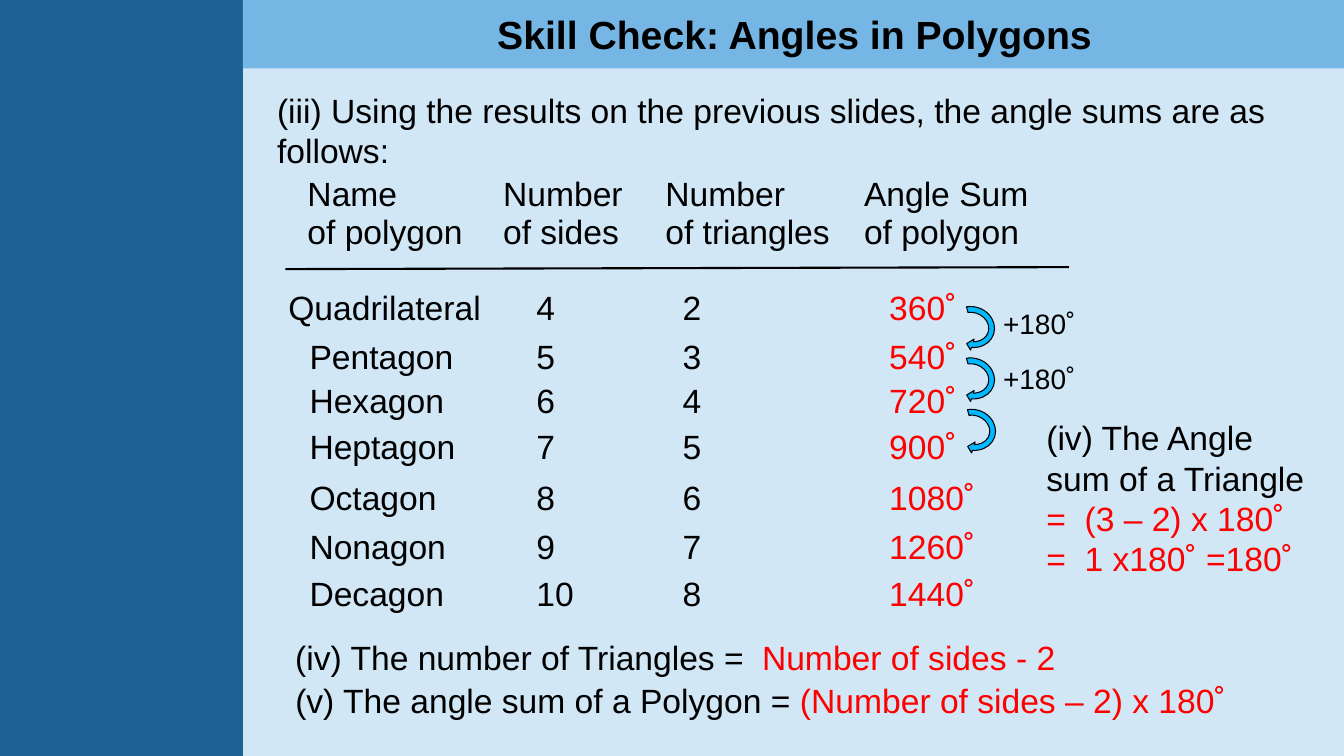
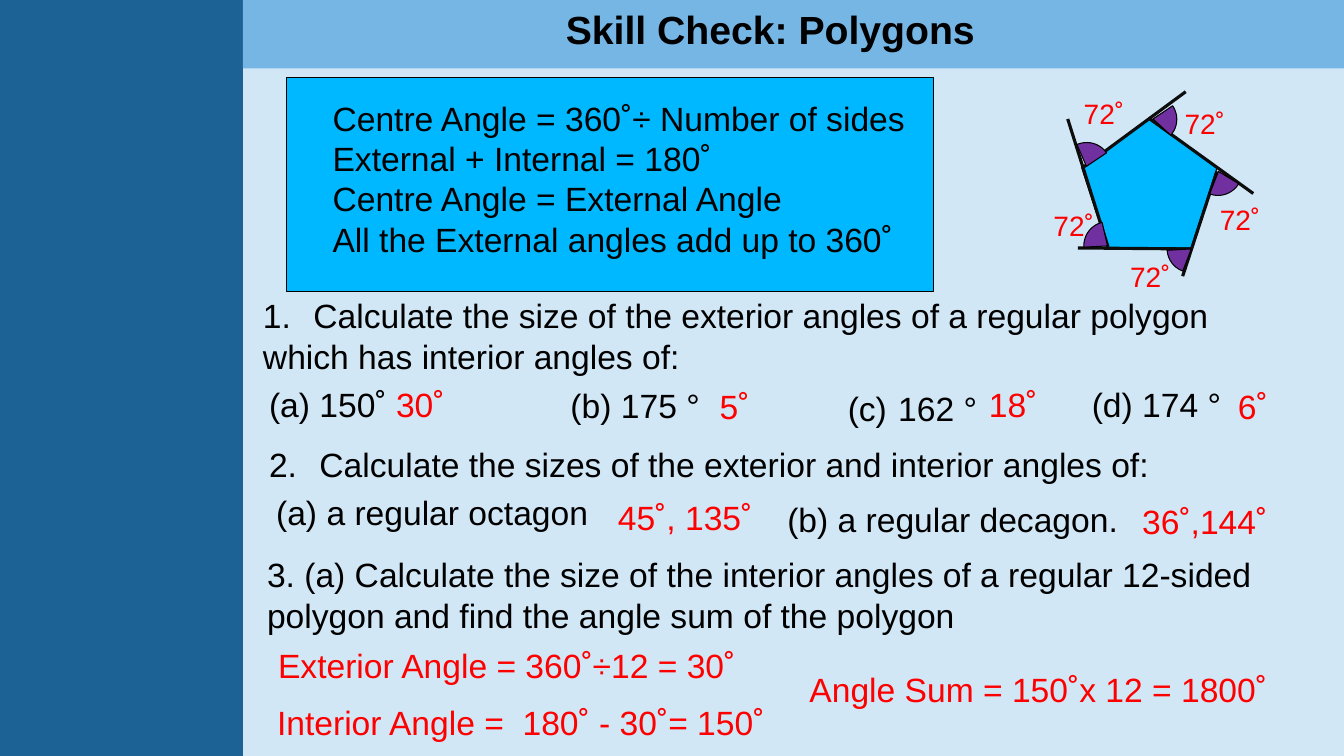
"""Build two revision slides on the angles of polygons."""
from dataclasses import dataclass

from lxml import etree
from pptx import Presentation
from pptx.dml.color import RGBColor
from pptx.enum.shapes import MSO_CONNECTOR, MSO_SHAPE
from pptx.enum.text import MSO_ANCHOR, PP_ALIGN
from pptx.oxml.ns import qn
from pptx.util import Pt

PX = 9144
TAB = 50
RECTANGLE = MSO_SHAPE.RECTANGLE
PENTAGON = MSO_SHAPE.REGULAR_PENTAGON
PIE = MSO_SHAPE.PIE
CIRCULAR_ARROW = MSO_SHAPE.CIRCULAR_ARROW
STRAIGHT = MSO_CONNECTOR.STRAIGHT
LEFT, CENTER = PP_ALIGN.LEFT, PP_ALIGN.CENTER
TOP = MSO_ANCHOR.TOP


@dataclass(frozen=True)
class Theme:
    font: str = "Arial"
    page: str = "D1E7F6"
    sidebar: str = "1D6294"
    banner: str = "75B6E5"
    accent: str = "00B8FF"
    wedge: str = "7030A0"
    ink: str = "000000"
    side: str = "0D0D0D"
    answer: str = "FF0000"
    title: int = 28
    body: int = 24
    label: int = 20


theme = Theme()
INK, RED = theme.ink, theme.answer


def write(frame, paragraphs, size=theme.body, bold=False, align=LEFT, start=None):
    """Fill a text frame with paragraphs made of (text, colour) runs."""
    frame.word_wrap = True
    for index, runs in enumerate(paragraphs):
        paragraph = frame.add_paragraph() if index else frame.paragraphs[0]
        paragraph.alignment = align
        properties = paragraph._p.get_or_add_pPr()
        if start:
            properties.set("marL", str(TAB * PX))
            properties.set("indent", str(-TAB * PX))
            etree.SubElement(properties, qn("a:buFont"), typeface=theme.font)
            etree.SubElement(properties, qn("a:buAutoNum"), type="alphaLcParenBoth", startAt=str(start))
        if "\t" in runs[0][0]:
            stops = etree.SubElement(properties, qn("a:tabLst"))
            etree.SubElement(stops, qn("a:tab"), pos=str(TAB * PX), algn="l")
        for text, color in runs:
            run = paragraph.add_run()
            run.text = text
            run.font.name = theme.font
            run.font.size = Pt(size)
            run.font.bold = bold
            run.font.color.rgb = RGBColor.from_string(color)


def outline(slide, kind, box, fill, lined=True, rotation=0, adjustments=()):
    """Draw a filled preset shape, with a thin outline if lined."""
    shape = slide.shapes.add_shape(kind, *[length * PX for length in box])
    shape.shadow.inherit = False
    shape.fill.solid()
    shape.fill.fore_color.rgb = RGBColor.from_string(fill)
    if lined:
        shape.line.color.rgb = RGBColor.from_string(INK)
        shape.line.width = Pt(0.75)
    else:
        shape.line.fill.background()
    shape.rotation = rotation
    for index, value in enumerate(adjustments):
        shape.adjustments[index] = value


deck = Presentation()
deck.slide_width, deck.slide_height = 1333 * PX, 750 * PX
slides = []
for title, left, top in [("Skill Check: Angles in Polygons", 242, 5), ("Skill Check: Polygons", 218, 0)]:
    slide = deck.slides.add_slide(deck.slide_layouts[6])
    slide.background.fill.solid()
    slide.background.fill.fore_color.rgb = RGBColor.from_string(theme.page)
    outline(slide, RECTANGLE, (0, 0, 241, 750), theme.sidebar, lined=False)
    outline(slide, RECTANGLE, (241, 0, 1092, 68), theme.banner, lined=False)
    heading = slide.shapes.add_textbox(left * PX, top * PX, 1092 * PX, 57 * PX)
    write(heading.text_frame, [[(title, INK)]], theme.title, True, CENTER)
    slides.append(slide)
angle_sums, exercises = slides

headers = [("Name", "of polygon"), ("Number", "of sides"), ("Number", "of triangles"), ("Angle Sum", "of polygon")]
polygons = ["Quadrilateral", "Pentagon", "Hexagon", "Heptagon", "Octagon", "Nonagon", "Decagon"]
column_widths = [213, 161, 197, 193]
row_heights = [113, 48, 44, 46, 50, 49, 47, 50]
header_indents = [29, 10, 10, 10]
body_indents = [31, 43, 27, 35]
rows = [[[[(line, INK)] for line in lines] for lines in headers]]
for sides, polygon in enumerate(polygons, start=4):
    triangles = sides - 2
    values = [(polygon, INK), (str(sides), INK), (str(triangles), INK), (f"{triangles * 180}˚", RED)]
    rows.append([[[value]] for value in values])
table = angle_sums.shapes.add_table(
    len(rows), len(headers), 276 * PX, 175 * PX, sum(column_widths) * PX, sum(row_heights) * PX
).table
table.first_row = table.horz_banding = False
for column, width in zip(table.columns, column_widths):
    column.width = width * PX
for row_index, (row, height) in enumerate(zip(rows, row_heights)):
    table.rows[row_index].height = height * PX
    for column_index, paragraphs in enumerate(row):
        cell = table.cell(row_index, column_index)
        indent = (body_indents if row_index else header_indents)[column_index]
        if (row_index, column_index) == (1, 0):
            indent = 10
        cell.margin_left = indent * PX
        cell.margin_right = cell.margin_top = cell.margin_bottom = 0
        cell.vertical_anchor = TOP
        cell.fill.background()
        for edge in ("a:lnB", "a:lnT", "a:lnR", "a:lnL"):
            border = etree.Element(qn(edge), w="0")
            etree.SubElement(border, qn("a:noFill"))
            cell._tc.get_or_add_tcPr().insert(0, border)
        write(cell.text_frame, paragraphs)

for left, top in [(941, 299), (941, 350), (942, 401)]:
    outline(angle_sums, CIRCULAR_ARROW, (left, top, 46, 51), theme.accent, rotation=107.8,
            adjustments=(0.125, 11.42, 204.58, 88.15, 0.125))

outline(exercises, RECTANGLE, (284, 77, 642, 212), theme.accent)
outline(exercises, PENTAGON, (1073, 118, 134, 128), theme.accent)

for slide, ends, color, weight in [
    (angle_sums, (283, 267, 1060, 265), INK, 1.5),
    (exercises, (1243, 192, 1139, 117), theme.side, 2.25),
    (exercises, (1059, 118, 1099, 245), theme.side, 2.25),
    (exercises, (1173, 274, 1207, 170), theme.side, 2.25),
    (exercises, (1176, 91, 1073, 167), theme.side, 2.25),
    (exercises, (1181, 247, 1069, 246), theme.side, 2.25),
]:
    rule = slide.shapes.add_connector(STRAIGHT, *[end * PX for end in ends])
    rule.line.color.rgb = RGBColor.from_string(color)
    rule.line.width = Pt(weight)
    etree.SubElement(rule._element.spPr, qn("a:effectLst"))

for left, top, rotation, first, last in [
    (1075, 220, 0, 106.22, 154.25),
    (1120, 94, 149.1, 106.22, 152.03),
    (1054, 141, 69.4, 106.22, 154.25),
    (1185, 146, 214.3, 106.22, 154.25),
    (1158, 223, 279.7, 114.8, 154.25),
]:
    outline(exercises, PIE, (left, top, 47, 48), theme.wedge, rotation=rotation, adjustments=(first, last))

angle_sum_notes = [
    (265, 84, 1016, 91, [
        [("(iii) Using the results on the previous slides, the angle sums are as follows:", INK)]]),
    (283, 627, 477, 50, [[("(iv) The number of Triangles =", INK)]]),
    (746, 627, 374, 50, [[("Number of sides - 2", RED)]]),
    (283, 670, 951, 50, [
        [("(v) The angle sum of a Polygon = ", INK), ("(Number of sides – 2) x 180˚", RED)]]),
    (1028, 409, 294, 172, [
        [("(iv) The Angle sum of a Triangle", INK)],
        [("=  (3 – 2) x 180˚", RED)],
        [("=  1 x180˚ =180˚", RED)]]),
]
exercise_notes = [
    (320, 92, 661, 172, [
        [("Centre Angle = 360˚÷ Number of sides", INK)],
        [("External + Internal = 180˚", INK)],
        [("Centre Angle = External Angle", INK)],
        [("All the External angles add up to 360˚", INK)]]),
    (251, 288, 1025, 91, [
        [("1.\tCalculate the size of the exterior angles of a regular polygon which has interior angles of:", INK)]]),
    (257, 376, 147, 50, [[("(a) 150˚", INK)]]),
    (383, 376, 80, 50, [[("30˚", RED)]]),
    (556, 377, 169, 50, [[("(b)\t175 °", INK)]]),
    (704, 378, 60, 50, [[("5˚", RED)]]),
    (831, 380, 169, 50, [[("(c)\t162 °", INK)]]),
    (971, 376, 80, 50, [[("18˚", RED)]]),
    (1073, 376, 169, 50, [[("(d)\t174 °", INK)]]),
    (1218, 378, 60, 50, [[("6˚", RED)]]),
    (257, 435, 969, 50, [[("2.\tCalculate the sizes of the exterior and interior angles of:", INK)]]),
    (264, 483, 345, 50, [[("(a)\ta regular octagon", INK)]]),
    (603, 488, 170, 50, [[("45˚, 135˚", RED)]]),
    (1123, 492, 160, 50, [[("36˚,144˚", RED)]]),
    (255, 545, 1025, 91, [
        [("3. (a) Calculate the size of the interior angles of a regular 12-sided polygon "
          "and find the angle sum of the polygon", INK)]]),
    (266, 635, 510, 50, [[("Exterior Angle = 360˚÷12 = 30˚", RED)]]),
    (265, 691, 530, 50, [[("Interior Angle =  180˚ - 30˚= 150˚", RED)]]),
    (793, 659, 500, 50, [[("Angle Sum = 150˚x 12 = 1800˚", RED)]]),
]
for slide, notes in [(angle_sums, angle_sum_notes), (exercises, exercise_notes)]:
    for left, top, width, height, paragraphs in notes:
        note = slide.shapes.add_textbox(left * PX, top * PX, width * PX, height * PX)
        write(note.text_frame, paragraphs)

decagon = exercises.shapes.add_textbox(771 * PX, 490 * PX, 365 * PX, 50 * PX)
write(decagon.text_frame, [[("a regular decagon.", INK)]], start=2)

steps = [(angle_sums, left, top, "+180˚", INK) for left, top in [(985, 299), (985, 354)]]
exterior_angles = [
    (exercises, left, top, "72˚", RED)
    for left, top in [(1111, 253), (1065, 91), (1035, 202), (1165, 101), (1200, 196)]
]
for slide, left, top, text, color in steps + exterior_angles:
    label = slide.shapes.add_textbox(left * PX, top * PX, 110 * PX, 44 * PX)
    write(label.text_frame, [[(text, color)]], theme.label)

deck.save("out.pptx")
